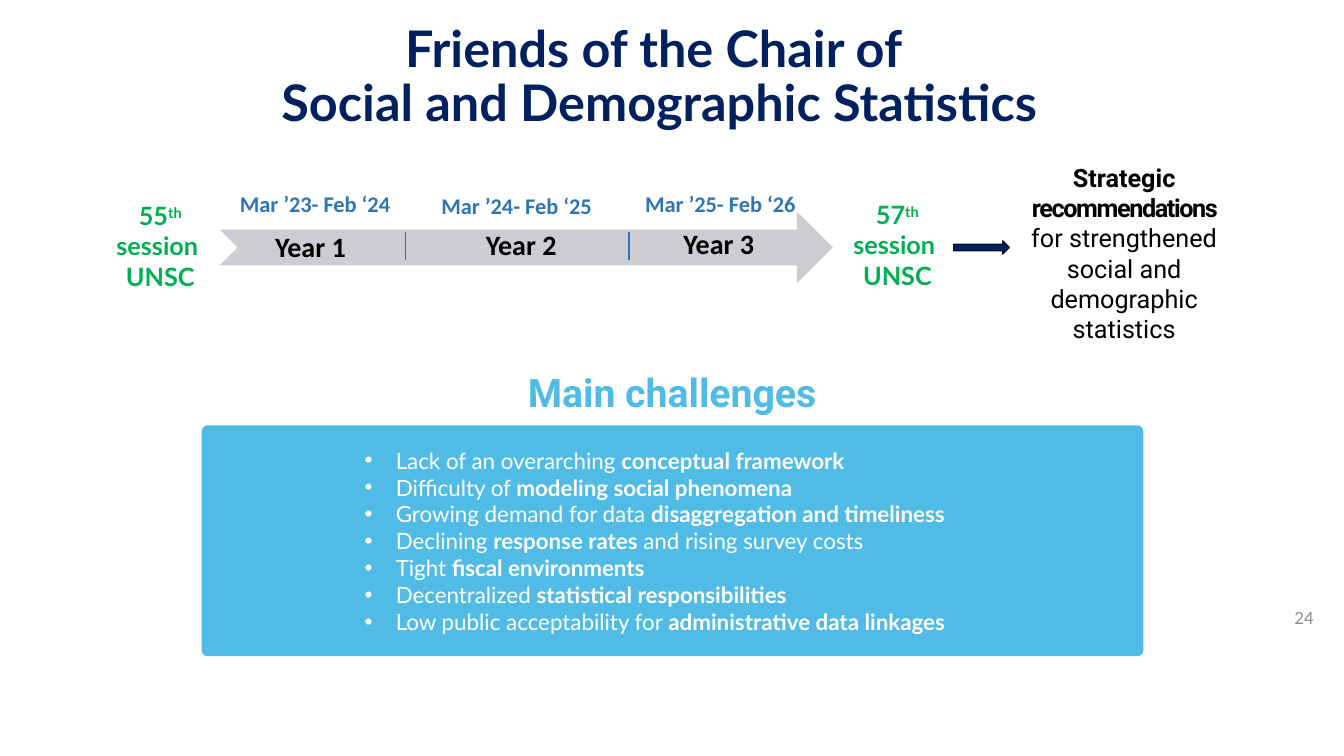
from lxml import etree
from pptx import Presentation
from pptx import util as u
from pptx.dml.color import RGBColor
from pptx.enum import shapes, text
from pptx.oxml.ns import qn

COLORS = {
    "navy": "002060", "outline": "000E2A", "sky": "50BCE6", "gray": "CCCDD2",
    "number": "8C8C8C", "green": "00B050", "blue": "2E75B5", "black": "000000", "white": "FFFFFF",
}
LEFT, CENTER, RIGHT = text.PP_ALIGN.LEFT, text.PP_ALIGN.CENTER, text.PP_ALIGN.RIGHT
TOP, MIDDLE = text.MSO_ANCHOR.TOP, text.MSO_ANCHOR.MIDDLE

presentation = Presentation()
presentation.slide_width = u.Inches(13.33)
presentation.slide_height = u.Inches(7.5)
slide = presentation.slides.add_slide(presentation.slide_layouts[6])


def write(shape, paragraphs, size, font, color, align=LEFT, anchor=TOP):
    frame = shape.text_frame
    frame.word_wrap = True
    frame.vertical_anchor = anchor
    for index, parts in enumerate(paragraphs):
        paragraph = frame.paragraphs[0] if index == 0 else frame.add_paragraph()
        paragraph.alignment = align
        for words, bold, extras in parts:
            run = paragraph.add_run()
            run.text = words
            run.font.size = u.Pt(size)
            run.font.name = font
            run.font.bold = bold
            run.font.color.rgb = RGBColor.from_string(COLORS[color])
            for name, value in extras.items():
                run.font._element.set(name, value)
    return frame


def add_filled(kind, left, top, width, height, color):
    shape = slide.shapes.add_shape(
        kind, u.Inches(left), u.Inches(top), u.Inches(width), u.Inches(height))
    shape.shadow.inherit = False
    shape.fill.solid()
    shape.fill.fore_color.rgb = RGBColor.from_string(COLORS[color])
    shape.line.fill.background()
    return shape


title = slide.shapes.add_textbox(u.Inches(0.79), u.Inches(0.05), u.Inches(11.5), u.Inches(1.45))
title_frame = write(title, [[("Friends of the Chair of ", True, {})]], 36, "Lato", "navy", CENTER, MIDDLE)
title_paragraph = title_frame.paragraphs[0]
title_paragraph.line_spacing = 0.9
title_paragraph.add_line_break()
second_line = title_paragraph.add_run()
second_line.text = "Social and Demographic Statistics"
second_line.font.size = u.Pt(36)
second_line.font.name = "Lato"
second_line.font.bold = True
second_line.font.color.rgb = RGBColor.from_string(COLORS["navy"])

challenges = [
    [("Lack of an overarching ", False), ("conceptual framework", True)],
    [("Difficulty of ", False), ("modeling social phenomena", True)],
    [("Growing demand for data ", False), ("disaggregation and timeliness", True)],
    [("Declining ", False), ("response rates ", True), ("and rising survey costs", False)],
    [("Tight ", False), ("fiscal environments", True)],
    [("Decentralized ", False), ("statistical responsibilities", True)],
    [("Low public acceptability for ", False), ("administrative data linkages", True)],
]
panel = add_filled(shapes.MSO_SHAPE.ROUNDED_RECTANGLE, 2, 4.22, 9.34, 2.29, "sky")
panel.adjustments[0] = 0.026
panel_frame = write(
    panel, [[(words, bold, {}) for words, bold in parts] for parts in challenges],
    16, "Lato", "white", LEFT, MIDDLE)
for paragraph in panel_frame.paragraphs:
    properties = paragraph._p.get_or_add_pPr()
    properties.set("marL", str(u.Inches(1.81)))
    properties.set("indent", str(u.Inches(-0.31)))
    etree.SubElement(properties, qn("a:buFont")).set("typeface", "Arial")
    etree.SubElement(properties, qn("a:buChar")).set("char", "•")

add_filled(shapes.MSO_SHAPE.NOTCHED_RIGHT_ARROW, 2.18, 2.1, 6.08, 0.71, "gray")

for x in (4.02, 6.24):
    divider = slide.shapes.add_connector(
        shapes.MSO_CONNECTOR.STRAIGHT, u.Inches(x), u.Inches(2.3), u.Inches(x), u.Inches(2.58))
    divider.line.color.rgb = RGBColor.from_string(COLORS["blue"])
    divider.line.width = u.Pt(1)
    etree.SubElement(divider._element.spPr, qn("a:effectLst"))

result_arrow = add_filled(shapes.MSO_SHAPE.DOWN_ARROW, 9.67, 2.18, 0.13, 0.55, "navy")
result_arrow.rotation = 270
result_arrow.line.color.rgb = RGBColor.from_string(COLORS["outline"])
result_arrow.line.width = u.Pt(1)

recommendations = [
    ("Strategic ", True, {}),
    ("recommendations ", True, {"spc": "-100"}),
    ("for strengthened social and demographic statistics", False, {}),
]
labels = [
    (10.13, 5.93, 3, 0.4, [[("24", False, {})]], 12, "Lato", "number", RIGHT, MIDDLE),
    (4.85, 3.6, 3.63, 0.57, [[("Main challenges", True, {})]], 28, "Roboto", "sky", CENTER, MIDDLE),
    (10.05, 1.56, 2.2, 1.92, [recommendations], 18, "Roboto", "black", CENTER, TOP),
]
for number, left, top, width, height in (("55", 0.98, 1.94, 1.22, 1.01), ("57", 8.19, 1.93, 1.42, 0.71)):
    session = [
        [(number, True, {}), ("th", True, {"baseline": "30000"}), (" session ", True, {})],
        [("UNSC", True, {})],
    ]
    labels.append((left, top, width, height, session, 18, "Lato", "green", CENTER, TOP))

years = [
    ("Year 1", 2.63, 2.23, "Mar ’23- Feb ‘24", 2.28, 1.84),
    ("Year 2", 4.72, 2.21, "Mar ’24- Feb ‘25", 4.28, 1.86),
    ("Year 3", 6.68, 2.2, "Mar ’25- Feb ‘26", 6.3, 1.84),
]
for year, year_left, year_top, period, period_left, period_top in years:
    labels.append((year_left, year_top, 1.5, 0.44, [[(year, True, {})]], 20, "Calibri", "black", LEFT, TOP))
    labels.append((period_left, period_top, 1.74, 0.37, [[(period, True, {})]], 16, "Calibri", "blue", LEFT, TOP))

for left, top, width, height, *content in labels:
    box = slide.shapes.add_textbox(u.Inches(left), u.Inches(top), u.Inches(width), u.Inches(height))
    write(box, *content)

presentation.save("out.pptx")
